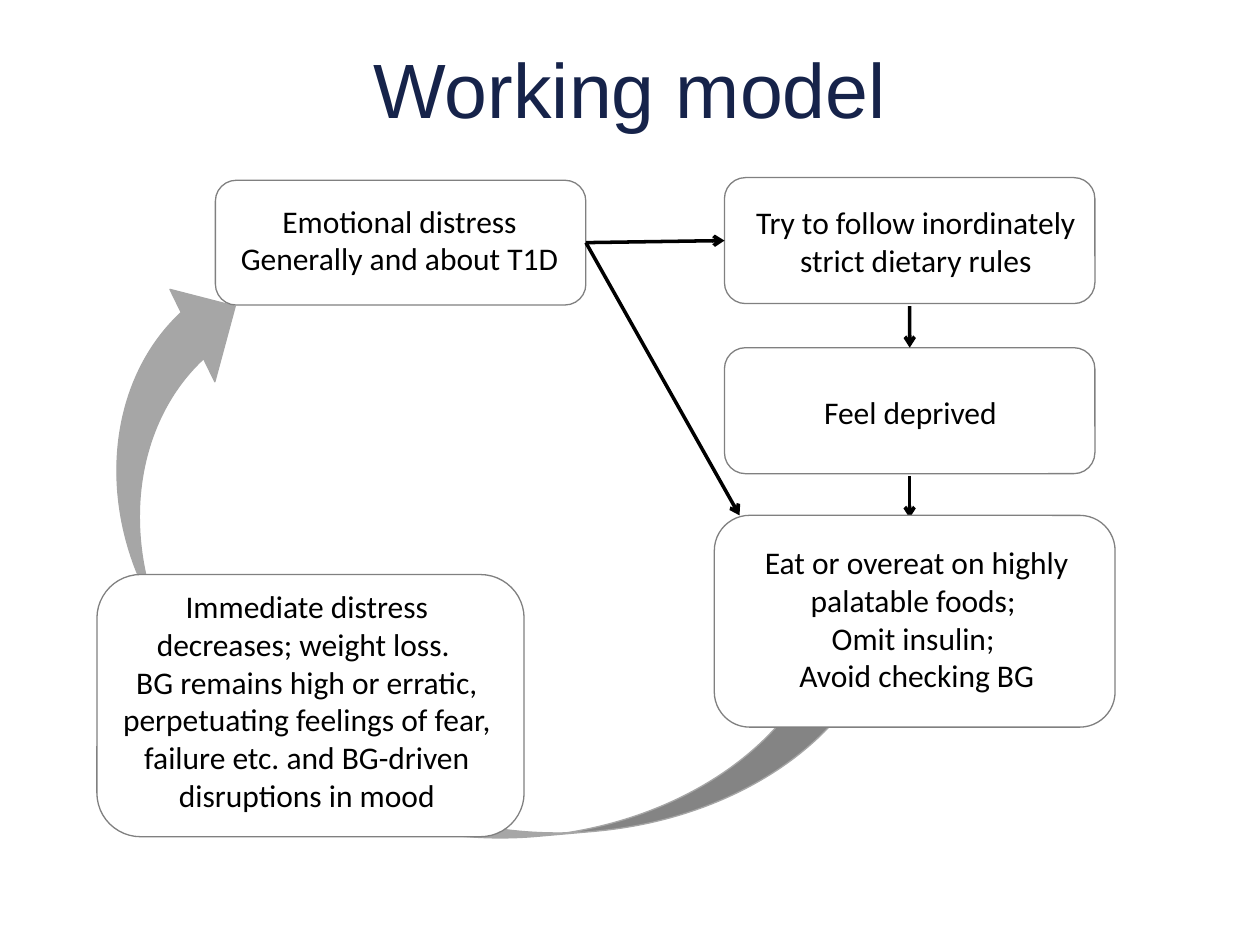
import pptx
import pptx.dml.color
import pptx.enum.shapes
import pptx.enum.text
import pptx.oxml.ns
import pptx.util
import lxml.etree

Pt = pptx.util.Pt
Shapes = pptx.enum.shapes.MSO_SHAPE
Align = pptx.enum.text.PP_ALIGN
Anchor = pptx.enum.text.MSO_ANCHOR
AutoSize = pptx.enum.text.MSO_AUTO_SIZE
COLORS = {
    "title": "16234A",
    "text": "000000",
    "arrow": "000000",
    "swoosh": "A6A6A6",
    "outline": "808080",
    "white": "FFFFFF",
}


def color(name):
    return pptx.dml.color.RGBColor.from_string(COLORS[name])


def points(values):
    return [Pt(value) for value in values]


def add_shape(page, kind, area, fill, line):
    shape = page.shapes.add_shape(kind, *points(area))
    shape.shadow.inherit = False
    if fill:
        shape.fill.solid()
        shape.fill.fore_color.rgb = color(fill)
    else:
        shape.fill.background()
    shape.line.color.rgb = color(line)
    shape.line.width = Pt(0.75)
    return shape


def add_swoosh(page, area, rotation):
    swoosh = add_shape(page, Shapes.CURVED_DOWN_ARROW, area, "swoosh", "swoosh")
    swoosh.rotation = rotation


def add_text(page, area, lines, size=18, font="Calibri", ink="text", wrap=True):
    box = page.shapes.add_textbox(*points(area))
    frame = box.text_frame
    frame.word_wrap = wrap
    frame.text = "\n".join(lines)
    for paragraph in frame.paragraphs:
        paragraph.alignment = Align.CENTER
        paragraph.font.size = Pt(size)
        paragraph.font.name = font
        paragraph.font.color.rgb = color(ink)
    frame.auto_size = AutoSize.SHAPE_TO_FIT_TEXT
    return box


def add_title(page, area, text):
    box = add_text(page, area, [text], 44, "Arial", "title")
    box.text_frame.auto_size = AutoSize.NONE
    box.text_frame.vertical_anchor = Anchor.MIDDLE


def add_node(page, area, text_area, lines, fill=None, wrap=True):
    node = add_shape(page, Shapes.ROUNDED_RECTANGLE, area, fill, "outline")
    add_text(page, text_area, lines, wrap=wrap)
    return node


def add_arrow(page, start, end, source=None, target=None):
    arrow = page.shapes.add_connector(
        pptx.enum.shapes.MSO_CONNECTOR.STRAIGHT, *points(start + end))
    if source:
        arrow.begin_connect(*source)
    if target:
        arrow.end_connect(*target)
    arrow.line.color.rgb = color("arrow")
    arrow.line.width = Pt(2)
    qualify = pptx.oxml.ns.qn
    properties = arrow.element.spPr
    outline = properties.find(qualify("a:ln"))
    lxml.etree.SubElement(outline, qualify("a:tailEnd"), type="arrow")
    lxml.etree.SubElement(properties, qualify("a:effectLst"))


def main():
    deck = pptx.Presentation()
    deck.slide_width, deck.slide_height = Pt(720), Pt(540)
    page = deck.slides.add_slide(deck.slide_layouts[6])

    add_title(page, (36, 5, 648, 90), "Working model")
    add_swoosh(page, (-21.6, 259.9, 321.1, 117.4), 244.1)
    add_swoosh(page, (105.1, 345.6, 409, 131.8), 175)

    distress = add_node(
        page, (123.1, 103, 211.7, 71.3), (124.6, 111.6, 207.4, 51.1),
        ["Emotional distress", "Generally and about T1D"])
    rules = add_node(
        page, (414, 101.5, 211.7, 72), (422.6, 112.3, 201.6, 51.1),
        ["Try to follow inordinately strict dietary rules"])
    deprived = add_node(
        page, (414, 198.7, 211.7, 72), (463, 221, 114.5, 28.8),
        ["Feel deprived"], wrap=False)

    add_arrow(page, (334.8, 139), (414, 137.5), (distress, 3), (rules, 1))
    add_arrow(page, (334.8, 139), (422.6, 294.5), (distress, 3))
    add_arrow(page, (519.8, 175), (519.8, 198.7), target=(deprived, 0))
    add_arrow(page, (519.8, 272), (519.8, 296))

    add_node(
        page, (408.2, 294.5, 229, 121), (409, 306.7, 229.7, 95),
        ["Eat or overeat on highly palatable foods; ", "Omit insulin; ",
         "Avoid checking BG"], "white")
    add_node(
        page, (55.4, 328.3, 244.1, 149.8), (59.8, 331.9, 231.1, 159.8),
        ["Immediate distress decreases; weight loss. ",
         "BG remains high or erratic, perpetuating feelings of fear, "
         "failure etc. and BG-driven disruptions in mood"], "white")

    deck.save("out.pptx")


if __name__ == "__main__":
    main()
